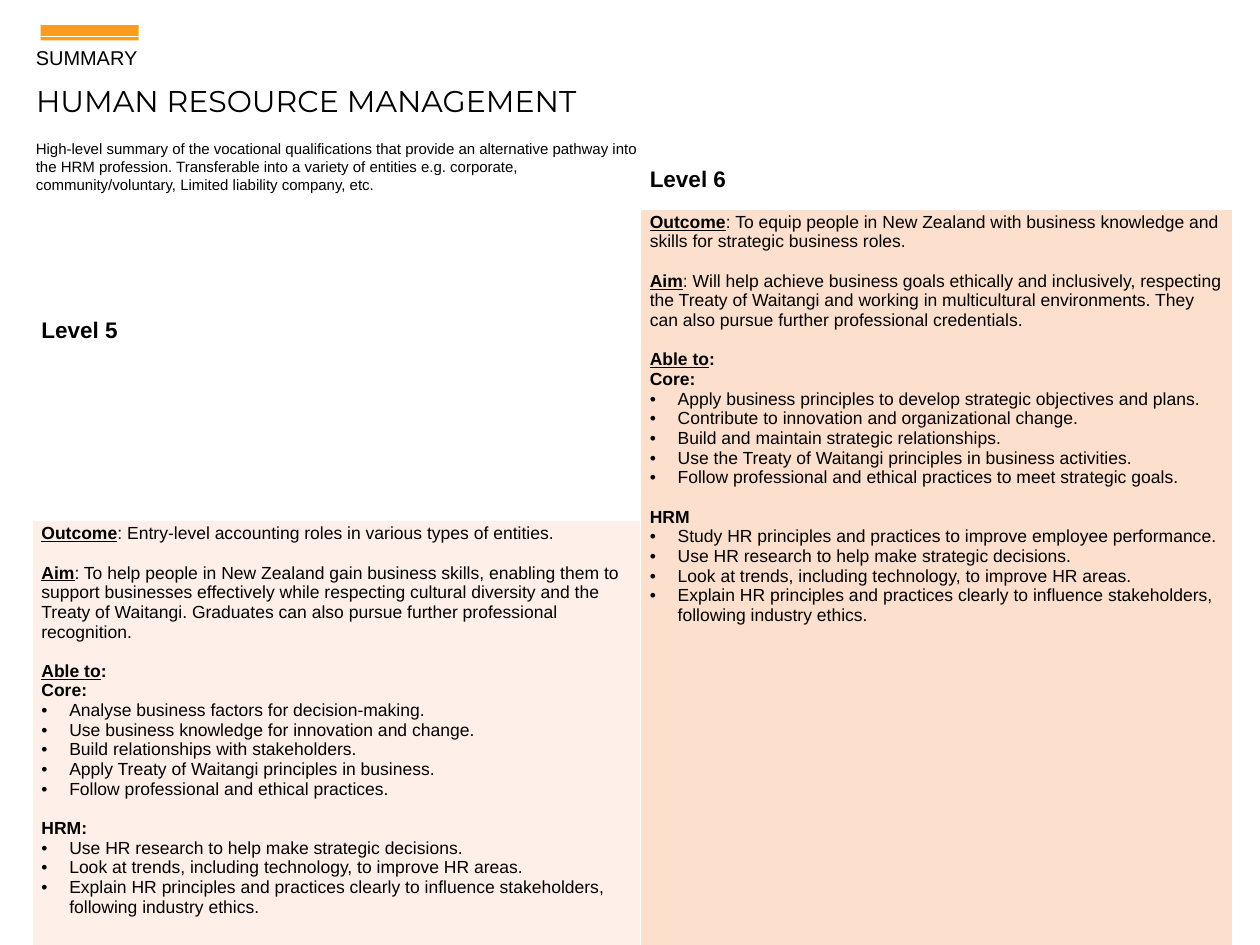
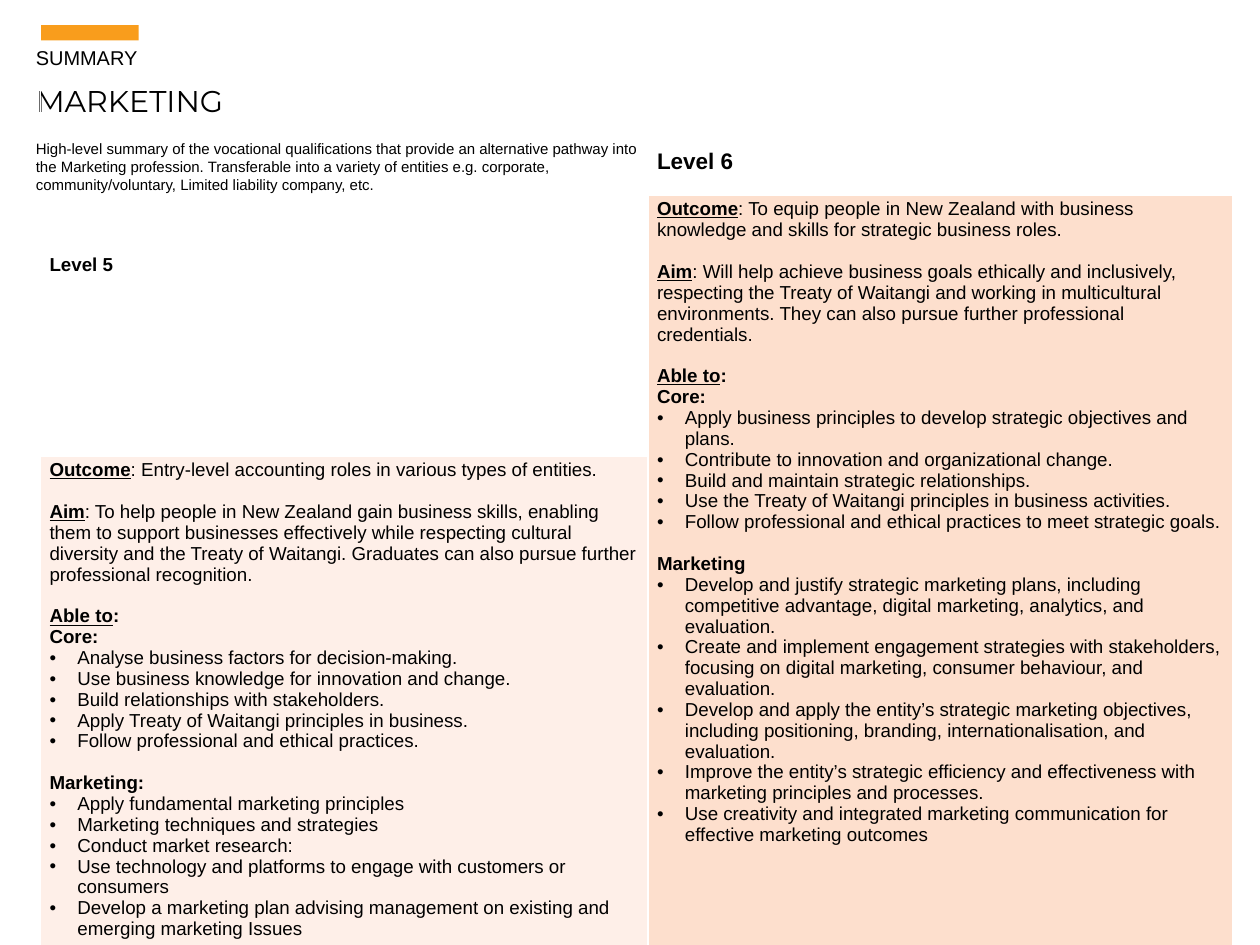
import pptx
import pptx.dml.color
import pptx.enum.shapes
import pptx.enum.text
import pptx.oxml
import pptx.oxml.ns
import pptx.util

COLOURS = {"text": "000000", "accent": "F99D1C", "border": "FFFFFF",
           "level 5": "FEEFE8", "level 6": "FDDFCD"}
BODY_FONT, TITLE_FONT = "Arial", "Montserrat"
GRID_COLUMNS, GRID_ROWS = 140, 105
SLIDE_WIDTH, SLIDE_HEIGHT = pptx.util.Inches(14), pptx.util.Inches(10.5)
LINE_PITCH = 1.12  # line height as a share of the font size
LEVEL_6_SIZE = 18
BULLET_INDENT = pptx.util.Inches(0.31)
CELL_INSET = pptx.util.Inches(0.05)

LEVEL_5 = {
    "outcome": "Entry-level accounting roles in various types of entities.",
    "aim": "To help people in New Zealand gain business skills, enabling them to support "
           "businesses effectively while respecting cultural diversity and the Treaty of "
           "Waitangi. Graduates can also pursue further professional recognition.",
    "core": ["Analyse business factors for decision-making.",
             "Use business knowledge for innovation and change.",
             "Build relationships with stakeholders.",
             "Apply Treaty of Waitangi principles in business.",
             "Follow professional and ethical practices."],
}
LEVEL_6 = {
    "outcome": "To equip people in New Zealand with business knowledge and skills for "
               "strategic business roles.",
    "aim": "Will help achieve business goals ethically and inclusively, respecting the Treaty "
           "of Waitangi and working in multicultural environments. They can also pursue "
           "further professional credentials.",
    "core": ["Apply business principles to develop strategic objectives and plans.",
             "Contribute to innovation and organizational change.",
             "Build and maintain strategic relationships.",
             "Use the Treaty of Waitangi principles in business activities.",
             "Follow professional and ethical practices to meet strategic goals."],
}
HRM_SHARED = [
    "Use HR research to help make strategic decisions.",
    "Look at trends, including technology, to improve HR areas.",
    "Explain HR principles and practices clearly to influence stakeholders, "
    "following industry ethics."]

SUMMARIES = [
    {"title": "HUMAN RESOURCE MANAGEMENT", "subject": "HRM",
     "table": (3.6, 4.1, 133.3, 96.3), "columns": (67.6, 65.8), "rows": (19, 18, 57.5),
     "level 5 size": 18, "body size": 14,
     "level 5": HRM_SHARED,
     "level 6": ["Study HR principles and practices to improve employee performance."]
     + HRM_SHARED},
    {"title": "MARKETING", "subject": "Marketing",
     "table": (4.5, 2.1, 132.5, 98.4), "columns": (67.5, 65), "rows": (19.5, 18.5, 59),
     "level 5 size": 15, "body size": 15,
     "level 5": [
         "Apply fundamental marketing principles",
         "Marketing techniques and strategies",
         "Conduct market research:",
         "Use technology and platforms to engage with customers or consumers",
         "Develop a marketing plan advising management on existing and emerging "
         "marketing Issues"],
     "level 6": [
         "Develop and justify strategic marketing plans, including competitive advantage, "
         "digital marketing, analytics, and evaluation.",
         "Create and implement engagement strategies with stakeholders, focusing on digital "
         "marketing, consumer behaviour, and evaluation.",
         "Develop and apply the entity’s strategic marketing objectives, including "
         "positioning, branding, internationalisation, and evaluation.",
         "Improve the entity’s strategic efficiency and effectiveness with marketing "
         "principles and processes.",
         "Use creativity and integrated marketing communication for effective marketing "
         "outcomes"]},
]


def across(columns):
    return round(SLIDE_WIDTH * columns / GRID_COLUMNS)


def down(rows):
    return round(SLIDE_HEIGHT * rows / GRID_ROWS)


def on_grid(left, top, width, height):
    return across(left), down(top), across(width), down(height)


def colour(name):
    return pptx.dml.color.RGBColor.from_string(COLOURS[name])


def add_run(paragraph, text, size, name=BODY_FONT, **formats):
    run = paragraph.add_run()
    run.text = text
    formats = {"size": pptx.util.Pt(size), "name": name, "bold": False, **formats}
    for attribute, value in formats.items():
        setattr(run.font, attribute, value)
    run.font.color.rgb = colour("text")


def add_bullet(paragraph):
    properties = paragraph._p.get_or_add_pPr()
    properties.set("marL", str(BULLET_INDENT))
    properties.set("indent", str(-BULLET_INDENT))
    namespace = pptx.oxml.ns.nsdecls("a")
    for element in ('buFont %s typeface="Arial"', 'buChar %s char="•"'):
        properties.append(pptx.oxml.parse_xml(f"<a:{element % namespace}/>"))


def add_brand_lines(slide):
    """Draw the accent bar at the top and the rule at the foot."""
    bar = slide.shapes.add_shape(pptx.enum.shapes.MSO_SHAPE.RECTANGLE,
                                 *on_grid(4.5, 2.8, 10.9, 1.7))
    bar.shadow.inherit = False
    bar.fill.solid()
    bar.fill.fore_color.rgb = colour("accent")
    bar.line.fill.background()
    rule = slide.shapes.add_connector(pptx.enum.shapes.MSO_CONNECTOR.STRAIGHT,
                                      across(4.5), down(102.9), across(135.5), down(102.9))
    rule.line.color.rgb = colour("accent")
    rule.line.width = pptx.util.Pt(2.25)
    rule._element.spPr.append(
        pptx.oxml.parse_xml(f"<a:effectLst {pptx.oxml.ns.nsdecls('a')}/>"))


def fill_text_box(shape, text, size, name=BODY_FONT):
    formats = {"word_wrap": True, "auto_size": pptx.enum.text.MSO_AUTO_SIZE.NONE,
               "vertical_anchor": pptx.enum.text.MSO_ANCHOR.TOP}
    for attribute, value in formats.items():
        setattr(shape.text_frame, attribute, value)
    paragraph = shape.text_frame.paragraphs[0]
    paragraph.alignment = pptx.enum.text.PP_ALIGN.LEFT
    add_run(paragraph, text, size, name)


def add_heading(slide, summary, left, top, width):
    """Stack the label, the title and the introduction."""
    label = slide.shapes.add_textbox(*on_grid(left, top, width, 3.8))
    fill_text_box(label, "SUMMARY", 16)
    title = slide.shapes.title
    title.left, title.top, title.width, title.height = on_grid(left, top + 4.1, width, 5.2)
    fill_text_box(title, summary["title"], 24, TITLE_FONT)
    introduction = slide.shapes.add_textbox(*on_grid(left, top + 10.4, width, 7.2))
    fill_text_box(
        introduction,
        "High-level summary of the vocational qualifications that provide an alternative "
        f"pathway into the {summary['subject']} profession. Transferable into a variety of "
        "entities e.g. corporate, community/voluntary, Limited liability company, etc.", 12)


def set_borders(cell, bottom_width):
    properties = cell._tc.get_or_add_tcPr()
    for side, width in (("L", 1), ("R", 1), ("T", 1), ("B", bottom_width)):
        properties.append(pptx.oxml.parse_xml(
            f'<a:ln{side} {pptx.oxml.ns.nsdecls("a")} w="{pptx.util.Pt(width)}">'
            f'<a:solidFill><a:srgbClr val="{COLOURS["border"]}"/></a:solidFill></a:ln{side}>'))


def fill_level_heading(cell, text, size, lines_above):
    """Lower the heading by a number of its own text lines."""
    cell.margin_top = CELL_INSET + pptx.util.Pt(lines_above * size * LINE_PITCH)
    add_run(cell.text_frame.paragraphs[0], text, size, bold=True)


def fill_level_details(cell, level, subject_heading, subject_items, size):
    frame = cell.text_frame
    heading = {"bold": True, "underline": True}

    def add_paragraph(new_section=False):
        paragraph = frame.add_paragraph()
        if new_section:
            paragraph.space_before = pptx.util.Pt(round(size * LINE_PITCH, 1))
        return paragraph

    outcome = frame.paragraphs[0]
    add_run(outcome, "Outcome", size, **heading)
    add_run(outcome, f": {level['outcome']}", size)
    aim = add_paragraph(new_section=True)
    add_run(aim, "Aim", size, **heading)
    add_run(aim, f": {level['aim']}", size)
    able_to = add_paragraph(new_section=True)
    add_run(able_to, "Able to", size, **heading)
    add_run(able_to, ":", size, bold=True)
    for text, items, new_section in (("Core:", level["core"], False),
                                     (subject_heading, subject_items, True)):
        add_run(add_paragraph(new_section), text, size, bold=True)
        for item in items:
            paragraph = add_paragraph()
            add_bullet(paragraph)
            add_run(paragraph, item, size)


def add_level_table(slide, summary):
    """Set the two levels as steps, with level 6 starting one row higher."""
    table = slide.shapes.add_table(3, 2, *on_grid(*summary["table"])).table
    table.first_row = table.horz_banding = False
    for column, width in zip(table.columns, summary["columns"]):
        column.width = across(width)
    for row, height in zip(table.rows, summary["rows"]):
        row.height = down(height)

    fills = ((None, None), (None, "level 6"), ("level 5", "level 6"))
    for row, names in enumerate(fills):
        for column, name in enumerate(names):
            cell = table.cell(row, column)
            set_borders(cell, 3 if row == 0 else 1)
            if name:
                cell.fill.solid()
                cell.fill.fore_color.rgb = colour(name)
            else:
                cell.fill.background()
    table.cell(0, 0).merge(table.cell(1, 0))
    table.cell(1, 1).merge(table.cell(2, 1))

    fill_level_heading(table.cell(0, 0), "Level 5", summary["level 5 size"], 11)
    fill_level_heading(table.cell(0, 1), "Level 6", LEVEL_6_SIZE, 5)
    subject, size = summary["subject"], summary["body size"]
    fill_level_details(table.cell(2, 0), LEVEL_5, f"{subject}:", summary["level 5"], size)
    fill_level_details(table.cell(1, 1), LEVEL_6, subject, summary["level 6"], size)


def add_summary_slide(presentation, summary):
    slide = presentation.slides.add_slide(presentation.slide_layouts.get_by_name("Title Only"))
    add_brand_lines(slide)
    add_level_table(slide, summary)
    add_heading(slide, summary, left=3, top=4.6, width=70.5)


def main():
    presentation = pptx.Presentation()
    presentation.slide_width, presentation.slide_height = SLIDE_WIDTH, SLIDE_HEIGHT
    for summary in SUMMARIES:
        add_summary_slide(presentation, summary)
    presentation.save("out.pptx")


if __name__ == "__main__":
    main()
